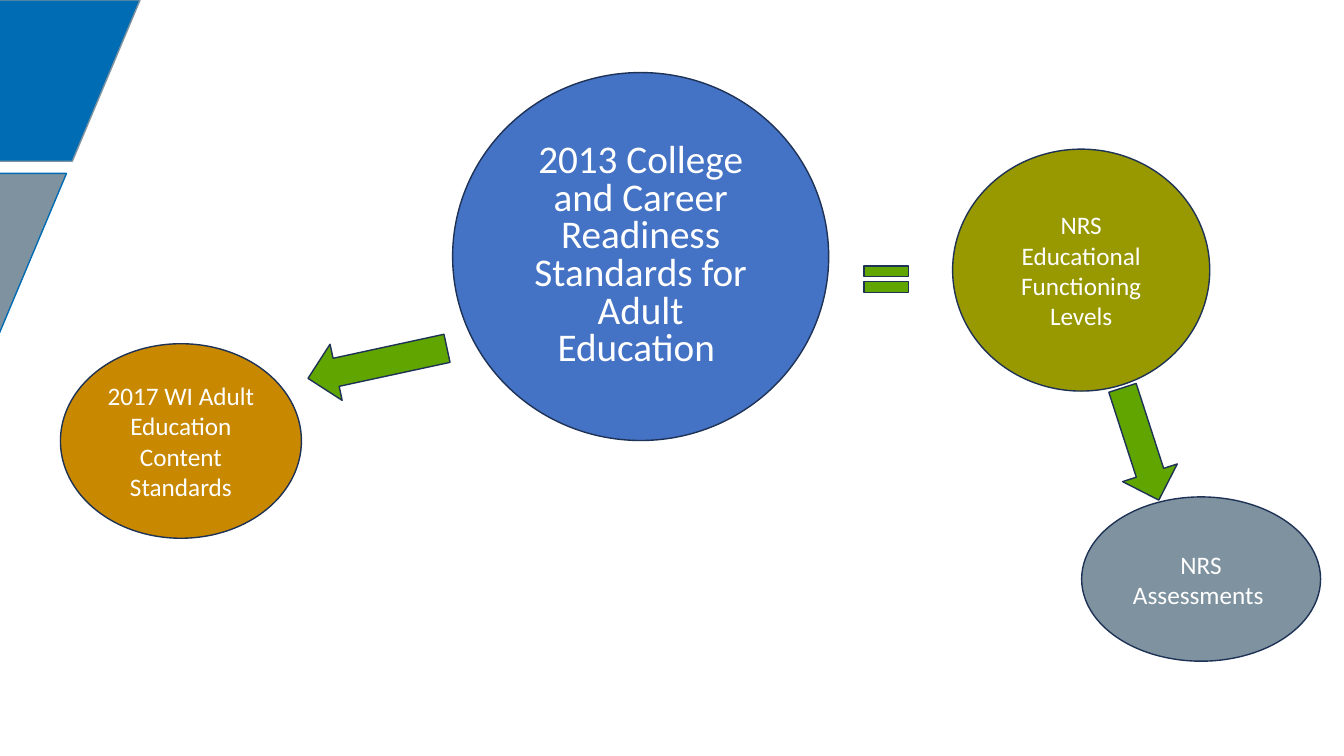
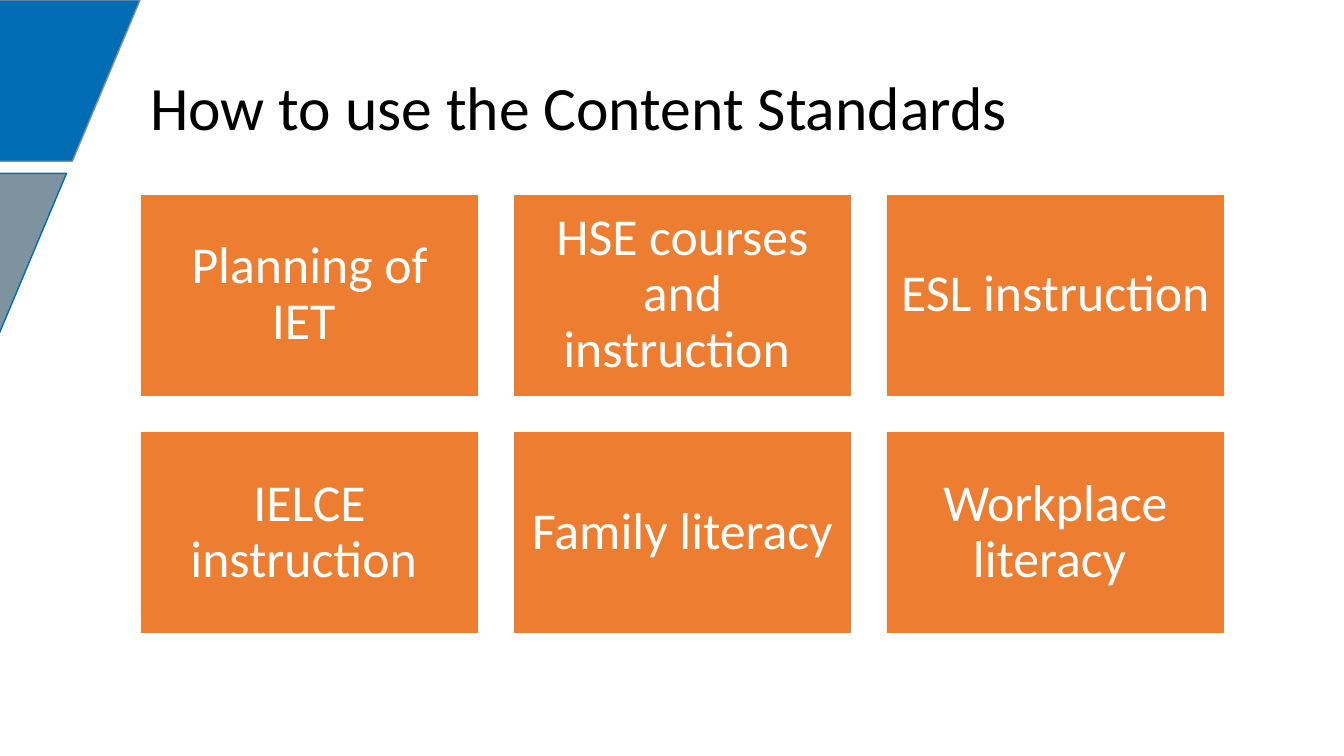
from lxml import etree
from pptx import Presentation
from pptx import util as u
from pptx.dml.color import RGBColor
from pptx.enum import shapes, text
from pptx.oxml import ns

KIND = shapes.MSO_SHAPE
BLUE, GRAY, GREEN, NAVY = "006CB3", "7E929F", "60A500", "1E3256"
WHITE, BLACK, ORANGE = "FFFFFF", "000000", "ED7D31"
FACE = "Calibri"
PAGE = (0, 0, u.Inches(13.333), u.Inches(7.5))


# Shared helpers
def style(item, values):
    for name, value in values.items():
        setattr(item, name, value)


def tint(color, code):
    color.rgb = RGBColor.from_string(code)


def share(box, left, top, wide, high):
    """Place a part by percentages of its box."""
    x, y, w, h = box
    return (int(x + w * left / 100), int(y + h * top / 100),
            int(w * wide / 100), int(h * high / 100))


def paint(shape, fill, line=NAVY, width=1):
    shape.fill.solid()
    tint(shape.fill.fore_color, fill)
    tint(shape.line.color, line)
    shape.line.width = u.Pt(width)


def draw(slide, kind, box, fill, line=NAVY, width=1, turn=0):
    shape = slide.shapes.add_shape(kind, *box)
    shape.shadow.inherit = False
    shape.rotation = turn
    paint(shape, fill, line, width)
    return shape


def write(shape, words, size, color=WHITE, align=text.PP_ALIGN.CENTER,
          space=1.0, inset=None):
    frame = shape.text_frame
    style(frame, {"text": words, "word_wrap": True,
                  "auto_size": text.MSO_AUTO_SIZE.NONE,
                  "vertical_anchor": text.MSO_ANCHOR.MIDDLE})
    if inset is not None:
        sides = ("left", "top", "right", "bottom")
        style(frame, {f"margin_{side}": u.Inches(inset) for side in sides})
    para = frame.paragraphs[0]
    # Plain paragraph without a bullet or hanging indent
    props = para._p.get_or_add_pPr()
    props.set("marL", "0")
    props.set("indent", "0")
    etree.SubElement(props, ns.qn("a:buNone"))
    style(para, {"alignment": align, "line_spacing": space,
                 "space_before": u.Pt(0)})
    style(para.font, {"name": FACE, "size": u.Pt(size)})
    tint(para.font.color, color)


def move(shape, box):
    style(shape, dict(zip(("left", "top", "width", "height"), box)))


# Slanted corner bands, held by the master
def bands(master, slide, box):
    rows = [(-14.78, 0, BLUE, GRAY), (-20.25, 22.93, GRAY, BLUE)]
    tree = master.shapes.element
    for rank, (left, top, fill, line) in enumerate(rows):
        band = draw(slide, KIND.FLOWCHART_DATA,
                    share(box, left, top, 25.2, 21.33), fill, line)
        band.name = f"Band {rank + 1}"
        band.element.nvSpPr.cNvPr.set("id", str(100 + rank))
        tree.insert(2 + rank, band.element)


# Diagram of linked standards
def links(slide, box):
    title, body = slide.placeholders
    title.element.getparent().remove(title.element)

    # Main circle in the body placeholder
    move(body, share(box, 33.68, 9.6, 27.98, 48.67))
    outline = etree.SubElement(body.element.spPr, ns.qn("a:prstGeom"),
                               prst="flowChartConnector")
    etree.SubElement(outline, ns.qn("a:avLst"))
    paint(body, "4472C4")
    write(body, "2013 College and Career Readiness Standards for "
          "Adult Education ", 28, space=0.8)

    # Smaller circles
    rings = [
        ((4.5, 45.47, 17.93, 25.73), "C88800",
         "2017 WI Adult Education Content Standards"),
        ((70.88, 19.73, 19.13, 32), "989800",
         "NRS Educational Functioning Levels"),
        ((80.48, 65.73, 17.78, 21.73), GRAY, "NRS Assessments "),
    ]
    for place, fill, words in rings:
        ring = draw(slide, KIND.FLOWCHART_CONNECTOR, share(box, *place), fill)
        write(ring, words, 18)

    # Arrows and equals sign
    signs = [
        (KIND.LEFT_ARROW, (22.8, 44.27, 10.58, 7.6), 347.8),
        (KIND.MATH_EQUAL, (63.68, 34, 4.5, 5.87), 0),
        (KIND.LEFT_ARROW, (80.48, 54.93, 8.78, 7.6), 252.1),
    ]
    for kind, place, turn in signs:
        draw(slide, kind, share(box, *place), GREEN, turn=turn)


# Title line
def head(slide, box, words):
    title = slide.shapes.title
    move(title, box)
    write(title, words, 44, BLACK, text.PP_ALIGN.LEFT, 0.9)


# Grid of equal cards
def cards(slide, box, labels, cols=3, gap=u.Inches(0.34)):
    x, y, w, h = box
    rows = -(-len(labels) // cols)
    wide = (w - gap * (cols - 1)) // cols
    high = (h - gap * (rows - 1)) // rows
    for rank, label in enumerate(labels):
        row, col = divmod(rank, cols)
        place = (x + col * (wide + gap), y + row * (high + gap), wide, high)
        card = draw(slide, KIND.RECTANGLE, place, ORANGE, WHITE, 1.5)
        write(card, label, 37, space=0.9, inset=0.15)


def main():
    deck = Presentation()
    style(deck, {"slide_width": PAGE[2], "slide_height": PAGE[3]})
    plans = deck.slide_layouts

    first = deck.slides.add_slide(plans.get_by_name("Title and Content"))
    bands(deck.slide_master, first, PAGE)
    links(first, PAGE)

    second = deck.slides.add_slide(plans.get_by_name("Title Only"))
    head(second, share(PAGE, 10.43, 8.13, 69.15, 13.07),
         "How to use the Content Standards")
    cards(second, share(PAGE, 10.43, 25.6, 80.7, 58.27),
          ["Planning of IET ", "HSE courses and instruction ",
           "ESL instruction", "IELCE instruction ", "Family literacy",
           "Workplace literacy "])

    deck.save("out.pptx")


if __name__ == "__main__":
    main()
